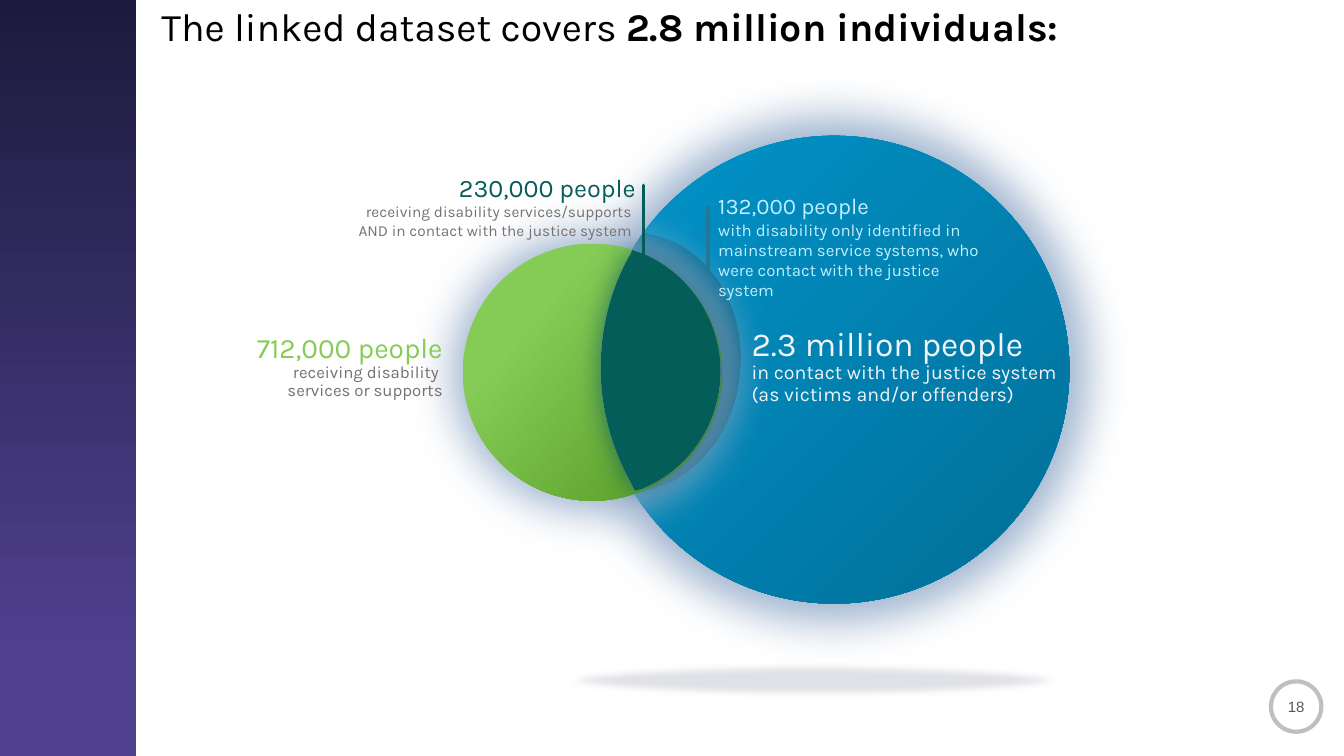
import copy

import pptx
import pptx.dml.color
import pptx.enum.shapes
import pptx.enum.text
import pptx.oxml
import pptx.oxml.ns
import pptx.util
from pptx.util import Cm

FONT = "Karla"
GLOW = "9FB4CF"
OVAL = pptx.enum.shapes.MSO_SHAPE.OVAL
RECTANGLE = pptx.enum.shapes.MSO_SHAPE.RECTANGLE
LEFT = pptx.enum.text.PP_ALIGN.LEFT
RIGHT = pptx.enum.text.PP_ALIGN.RIGHT

CRESCENT = [
    [(16.21, 5.87)],
    [(16.41, 5.92)],
    [(17.81, 6.2), (18.8, 7.67), (18.64, 9.37)],
    [(18.52, 11.05), (17.3, 12.34), (15.88, 12.4)],
    [(15.72, 12.4)],
    [(15.6, 12.19)],
    [(15.16, 11.25), (14.96, 10.19), (15.06, 9.02)],
    [(15.16, 7.87), (15.54, 6.83), (16.13, 5.99)],
]
LENS = [
    [(15.93, 6.3)],
    [(16.18, 6.38)],
    [(17.35, 6.86), (18.16, 8.03), (18.16, 9.35)],
    [(18.16, 10.69), (17.35, 11.84), (16.18, 12.32)],
    [(16, 12.37)],
    [(15.9, 12.17)],
    [(15.42, 11.3), (15.14, 10.31), (15.14, 9.27)],
    [(15.14, 8.2), (15.42, 7.21), (15.9, 6.38)],
]


def colour(text):
    return pptx.dml.color.RGBColor.from_string(text)


def element(xml):
    namespace = pptx.oxml.ns.nsdecls("a")
    return pptx.oxml.parse_xml(xml.replace(" ", f" {namespace} ", 1))


def effect_list(shape):
    return shape.element.spPr.find(pptx.oxml.ns.qn("a:effectLst"))


def finish(shape, fill):
    shape.shadow.inherit = False
    shape.line.fill.background()
    shape.fill.solid()
    shape.fill.fore_color.rgb = colour(fill)
    return shape


def add_preset(page, kind, place, fill):
    return finish(page.shapes.add_shape(kind, *map(Cm, place)), fill)


def add_gradient(shape, stops, angle, opacity=100):
    shape.fill.gradient()
    shape.fill.gradient_angle = 360 - angle
    for stop, (position, tone) in zip(shape.fill.gradient_stops, stops):
        stop.position = position
        stop.color.rgb = colour(tone)
    if opacity < 100:
        for tone in shape.element.spPr.iter(pptx.oxml.ns.qn("a:srgbClr")):
            tone.append(element(f'<a:alpha val="{opacity * 1000}"/>'))


def add_glow(shape, tone, opacity, blur, scale=100):
    effect_list(shape).append(element(
        f'<a:outerShdw blurRad="{pptx.util.Pt(blur)}" dist="0" dir="0" '
        f'sx="{scale * 1000}" sy="{scale * 1000}" algn="ctr" rotWithShape="0">'
        f'<a:srgbClr val="{tone}"><a:alpha val="{opacity * 1000}"/></a:srgbClr></a:outerShdw>'))


def add_soft_edge(shape, radius):
    effect_list(shape).append(element(f'<a:softEdge rad="{pptx.util.Pt(radius)}"/>'))


def add_outline(shapes, segments, fill):
    corners = [tuple(map(Cm, segment[-1])) for segment in segments]
    builder = shapes.build_freeform(*corners[0])
    builder.add_line_segments(corners[1:], close=True)
    shape = builder.convert_to_shape()
    sides = list(shape.element.spPr.iter(pptx.oxml.ns.qn("a:lnTo")))
    for side, segment in zip(sides, segments[1:]):
        if len(segment) == 3:
            curve = element("<a:cubicBezTo />")
            for x, y in segment:
                curve.append(element(f'<a:pt x="{Cm(x) - shape.left}" y="{Cm(y) - shape.top}"/>'))
            side.getparent().replace(side, curve)
    return finish(shape, fill)


def format_span(span, size, tone, bold=False, font=FONT):
    span.font.name = font
    span.font.size = pptx.util.Pt(size)
    span.font.bold = bold
    span.font.color.rgb = colour(tone)


def add_box(page, place):
    box = page.shapes.add_textbox(*map(Cm, place))
    box.text_frame.word_wrap = True
    return box


def add_title(page, place, plain, strong):
    para = add_box(page, place).text_frame.paragraphs[0]
    para.text = plain
    para.line_spacing = 0.9
    para.add_run().text = strong
    for span, bold in zip(para.runs, (False, True)):
        format_span(span, 28, "000000", bold)


def add_label(page, place, align, heading, detail):
    frame = add_box(page, place).text_frame
    frame.auto_size = pptx.enum.text.MSO_AUTO_SIZE.SHAPE_TO_FIT_TEXT
    frame.text = heading[0]
    frame.add_paragraph().text = detail[0]
    for para, (_, size, tone, spacing) in zip(frame.paragraphs, (heading, detail)):
        para.alignment = align
        para.line_spacing = spacing
        for span in para.runs:
            format_span(span, size, tone)
        for line_break in para._p.findall(pptx.oxml.ns.qn("a:br")):
            line_break.append(copy.deepcopy(para.runs[0].font._element))


def add_pointer(page, x, top, bottom, tone):
    pointer = page.shapes.add_connector(
        pptx.enum.shapes.MSO_CONNECTOR.STRAIGHT, Cm(x), Cm(top), Cm(x), Cm(bottom))
    pointer.line.color.rgb = colour(tone)
    pointer.line.width = pptx.util.Pt(2.5)
    pointer.element.spPr.find(pptx.oxml.ns.qn("a:ln")).set("cap", "rnd")
    pointer.element.spPr.append(element("<a:effectLst />"))


def add_page_number(page, place, number):
    badge = add_preset(page, OVAL, place, "FFFFFF")
    badge.line.color.rgb = colour("BFBFBF")
    badge.line.width = pptx.util.Pt(3)
    frame = add_box(page, place).text_frame
    frame.margin_left = frame.margin_right = Cm(0.18)
    frame.margin_top = frame.margin_bottom = Cm(0.08)
    frame.vertical_anchor = pptx.enum.text.MSO_ANCHOR.MIDDLE
    frame.text = number
    frame.paragraphs[0].alignment = pptx.enum.text.PP_ALIGN.CENTER
    format_span(frame.paragraphs[0].runs[0], 10.7, "595959", font="Arial")


def add_diagram(page):
    floor = add_preset(page, OVAL, (13.87, 16.66, 13.23, 0.94), "E1E2E7")
    add_soft_edge(floor, 5)

    justice = add_preset(page, OVAL, (15.09, 3.42, 11.86, 11.79), "0194CA")
    add_gradient(justice, [(0, "0194CA"), (1, "016F98")], 45)
    add_glow(justice, GLOW, 100, 32, 108)

    crescent = add_outline(page.shapes, CRESCENT, "016F98")
    add_gradient(crescent, [(0, "016F98"), (1, "004A65")], 40, 70)

    disability = add_preset(page, OVAL, (11.66, 6.14, 6.53, 6.48), "85CC56")
    add_gradient(disability, [(0.27, "85CC56"), (0.77, "61A732")], 40)
    add_glow(disability, GLOW, 100, 32, 108)

    overlap = page.shapes.add_group_shape()
    add_glow(add_outline(overlap.shapes, LENS, GLOW), "004A65", 66, 19)
    add_outline(overlap.shapes, LENS, "055D59")


def add_labels(page):
    add_label(page, (18.69, 8.21, 8.38, 2.16), LEFT,
              ("2.3 million people", 24, "F1F4F8", 0.8),
              ("in contact with the justice system \n(as victims and/or offenders)", 14, "F1F4F8", 0.9))
    add_label(page, (5.26, 8.36, 6.15, 1.85), RIGHT,
              ("712,000 people", 20, "85CC56", 0.8),
              ("receiving disability \nservices or supports", 12, "767171", 0.9))
    add_label(page, (6.8, 4.37, 9.47, 1.8), RIGHT,
              ("230,000 people", 18, "055D59", 0.8),
              ("receiving disability services/supports \nAND in contact with the justice system ",
               11, "767171", 1.0))
    add_label(page, (17.85, 4.86, 7.29, 2.84), LEFT,
              ("132,000 people", 16, "C2EEFF", 0.8),
              ("with disability only identified in mainstream service systems, "
               "who were contact with the justice system", 12, "C2EEFF", 1.0))


def main():
    deck = pptx.Presentation()
    deck.slide_width, deck.slide_height = Cm(33.87), Cm(19.05)
    page = deck.slides.add_slide(deck.slide_layouts[6])
    band = add_preset(page, RECTANGLE, (0, 0, 3.43, 19.05), "1C1B3D")
    add_gradient(band, [(0, "1C1B3D"), (0.86, "4F408E")], 90)
    add_page_number(page, (32.03, 17.17, 1.27, 1.27), "18")
    add_title(page, (3.82, 0.08, 28.35, 1.7), "The linked dataset covers ", "2.8 million individuals:")
    add_diagram(page)
    add_labels(page)
    add_pointer(page, 16.22, 4.67, 6.53, "045D59")
    add_pointer(page, 17.84, 5.23, 6.78, "297596")
    deck.save("out.pptx")


if __name__ == "__main__":
    main()
